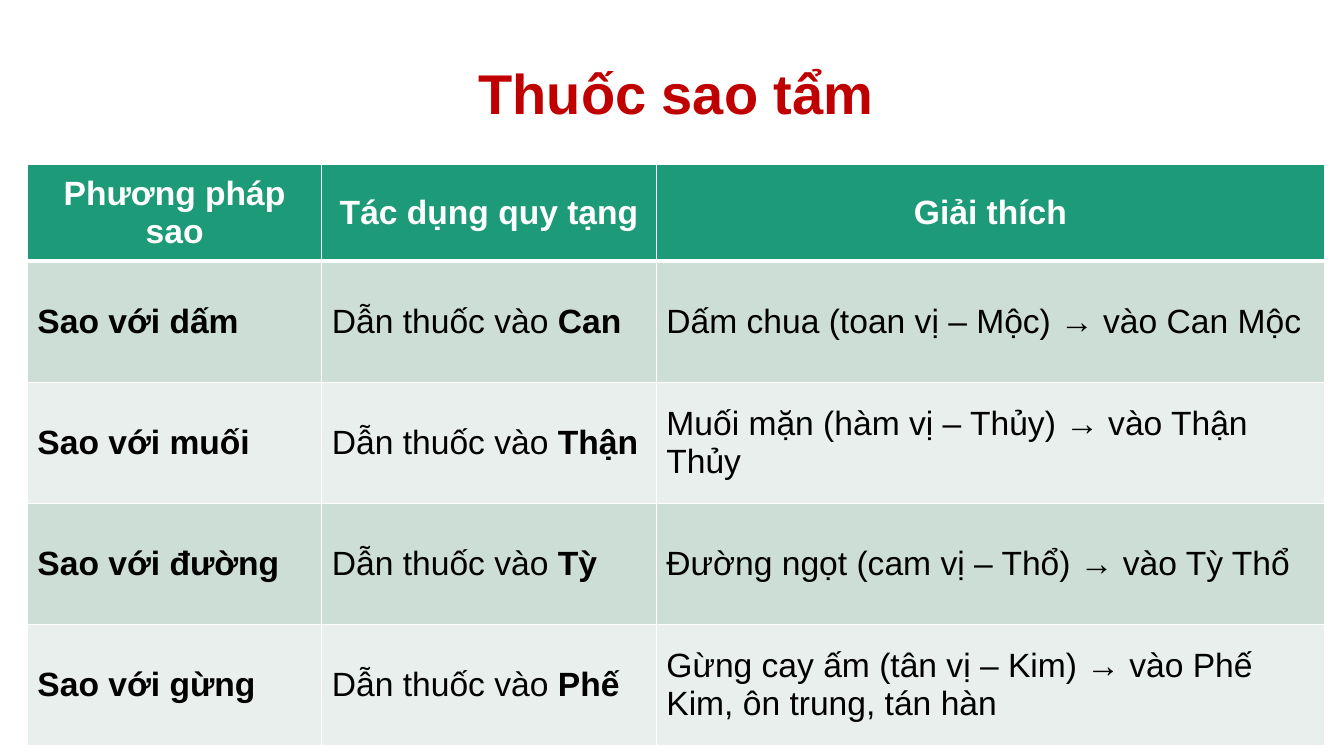
import dataclasses

import lxml.etree
import pptx
import pptx.dml.color
import pptx.enum.text
import pptx.oxml.ns
import pptx.util

Cm = pptx.util.Cm
Pt = pptx.util.Pt
ALIGN = pptx.enum.text.PP_ALIGN
MIDDLE = pptx.enum.text.MSO_ANCHOR.MIDDLE

COLORS = {
    "title": "C00000",
    "header": "1D9A78",
    "odd": "CDDED6",
    "even": "E8EFEC",
    "text": "000000",
    "white": "FFFFFF",
}
TITLE_FONT = {"name": "Arial", "size": Pt(40), "bold": True}
CELL_FONT = {"name": "Arial", "size": Pt(24)}
TITLE_BOX = {"left": Cm(0.69), "top": Cm(1.02), "width": Cm(32.69), "height": Cm(2.82)}
HEADERS = ("Phương pháp sao", "Tác dụng quy tạng", "Giải thích")
COL_WIDTHS = (7.42, 8.43, 16.84)
HEADER_HEIGHT = 2.44
ROW_HEIGHT = 3.05
TABLE_TOP = 4.14


@dataclasses.dataclass(frozen=True)
class Run:
    text: str
    bold: bool = False


@dataclasses.dataclass(frozen=True)
class Method:
    name: str
    organ: str
    reason: str

    def cells(self) -> list[list[Run]]:
        return [
            [Run(self.name, True)],
            [Run("Dẫn thuốc vào "), Run(self.organ, True)],
            [Run(self.reason)],
        ]


METHODS = (
    Method("Sao với dấm", "Can", "Dấm chua (toan vị – Mộc) → vào Can Mộc"),
    Method("Sao với muối", "Thận", "Muối mặn (hàm vị – Thủy) → vào Thận Thủy"),
    Method("Sao với đường", "Tỳ", "Đường ngọt (cam vị – Thổ) → vào Tỳ Thổ"),
    Method("Sao với gừng", "Phế", "Gừng cay ấm (tân vị – Kim) → vào Phế Kim, ôn trung, tán hàn"),
)


def rgb(key: str) -> pptx.dml.color.RGBColor:
    return pptx.dml.color.RGBColor.from_string(COLORS[key])


def set_attrs(target: object, values: dict) -> None:
    for name, value in values.items():
        setattr(target, name, value)


def add_run(p, text: str, font: dict, color: str) -> None:
    r = p.add_run()
    r.text = text
    set_attrs(r.font, font)
    r.font.color.rgb = rgb(color)


def add_borders(cell, widths: dict[str, int]) -> None:
    tc_pr = cell._tc.get_or_add_tcPr()
    qn = pptx.oxml.ns.qn
    for i, (side, width) in enumerate(widths.items()):
        ln = lxml.etree.Element(qn(f"a:ln{side}"), w=str(Pt(width)))
        fill = lxml.etree.SubElement(ln, qn("a:solidFill"))
        lxml.etree.SubElement(fill, qn("a:srgbClr"), val=COLORS["white"])
        tc_pr.insert(i, ln)


def fill_cell(cell, runs: list[Run], row: int) -> None:
    header = row == 0
    cell.vertical_anchor = MIDDLE
    cell.fill.solid()
    cell.fill.fore_color.rgb = rgb("header" if header else "odd" if row % 2 else "even")
    p = cell.text_frame.paragraphs[0]
    p.alignment = ALIGN.CENTER if header else ALIGN.LEFT
    for run in runs:
        add_run(p, run.text, CELL_FONT | {"bold": run.bold}, "white" if header else "text")
    add_borders(cell, {"L": 1, "R": 1, "T": 3 if row == 1 else 1, "B": 3 if header else 1})


def add_title(s, text: str) -> None:
    title = s.shapes.title
    set_attrs(title, TITLE_BOX)
    tf = title.text_frame
    set_attrs(tf, {"vertical_anchor": MIDDLE, "word_wrap": True})
    p = tf.paragraphs[0]
    set_attrs(p, {"alignment": ALIGN.CENTER, "line_spacing": 0.9})
    add_run(p, text, TITLE_FONT, "title")


def add_methods_table(s) -> None:
    rows = [[[Run(text, True)] for text in HEADERS]] + [m.cells() for m in METHODS]
    heights = [HEADER_HEIGHT] + [ROW_HEIGHT] * len(METHODS)
    table = s.shapes.add_table(
        len(rows), len(HEADERS), TITLE_BOX["left"], Cm(TABLE_TOP),
        Cm(sum(COL_WIDTHS)), Cm(sum(heights)),
    ).table
    for column, width in zip(table.columns, COL_WIDTHS):
        column.width = Cm(width)
    for i, (height, cells) in enumerate(zip(heights, rows)):
        table.rows[i].height = Cm(height)
        for j, runs in enumerate(cells):
            fill_cell(table.cell(i, j), runs, i)


def main() -> None:
    prs = pptx.Presentation()
    set_attrs(prs, {"slide_width": Cm(33.87), "slide_height": Cm(19.05)})
    s = prs.slides.add_slide(prs.slide_layouts.get_by_name("Title Only"))
    add_title(s, "Thuốc sao tẩm")
    add_methods_table(s)
    prs.save("out.pptx")


if __name__ == "__main__":
    main()
